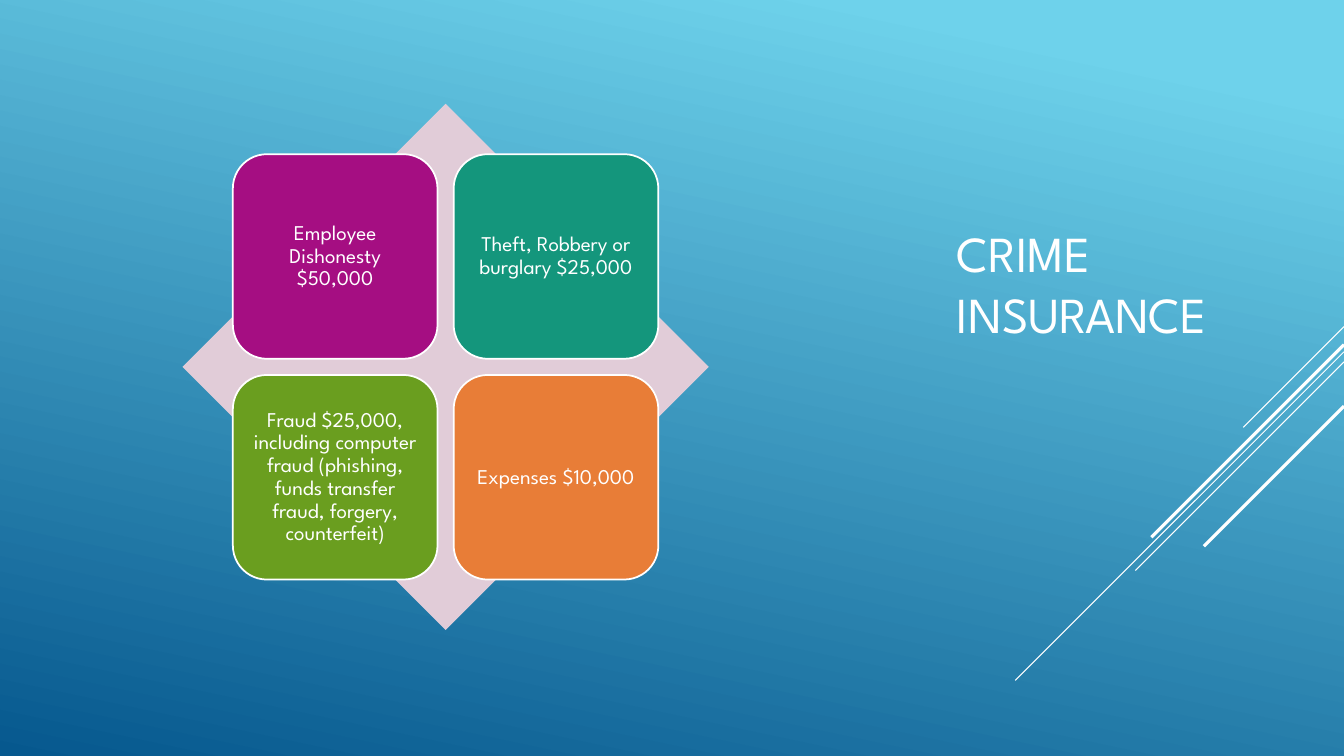
import pptx
import pptx.util
import pptx.dml.color
import pptx.enum.shapes
import pptx.enum.text
import pptx.oxml.ns
import lxml.etree

Inches = pptx.util.Inches
Pt = pptx.util.Pt
SHAPE = pptx.enum.shapes.MSO_SHAPE
ALIGN = pptx.enum.text.PP_ALIGN
FONT = "League Spartan"
WHITE = "FFFFFF"
WIDTH, HEIGHT = 13.33, 7.5


def rgb(value):
    return pptx.dml.color.RGBColor.from_string(value)


def add_shape(s, kind, x, y, w, h):
    sp = s.shapes.add_shape(kind, Inches(x), Inches(y), Inches(w), Inches(h))
    sp.shadow.inherit = False
    sp.line.fill.background()
    return sp


def set_text(sp, text, size, align, inset):
    tf = sp.text_frame
    tf.text = text
    tf.word_wrap = True
    tf.vertical_anchor = pptx.enum.text.MSO_ANCHOR.MIDDLE
    tf.margin_left = tf.margin_right = Inches(inset)
    tf.margin_top = tf.margin_bottom = Inches(inset)
    p = tf.paragraphs[0]
    p.alignment = align
    r = p.runs[0]
    r.font.name = FONT
    r.font.size = Pt(size)
    r.font.color.rgb = rgb(WHITE)
    return p


def draw_background(s, x, y, w, h):
    sp = add_shape(s, SHAPE.RECTANGLE, x, y, w, h)
    sp.fill.gradient()
    sp.fill.gradient_angle = 258
    stops = ((0.1, "6ED2EB"), (1, "06588E"))
    for stop, (position, color) in zip(sp.fill.gradient_stops, stops):
        stop.position = position
        stop.color.rgb = rgb(color)


def draw_diagonals(s, right):
    diagonals = (
        (3.24, 1, 0.75),
        (3.49, 3.26, 0.75),
        (3.59, 2.07, 0.75),
        (3.42, 1.91, 2.25),
        (4.03, 1.39, 2.25),
    )
    for top, run, weight in diagonals:
        line = s.shapes.add_connector(
            pptx.enum.shapes.MSO_CONNECTOR.STRAIGHT,
            Inches(right), Inches(top), Inches(right - run), Inches(top + run))
        line.line.color.rgb = rgb(WHITE)
        line.line.width = Pt(weight)
        lxml.etree.SubElement(
            line._element.spPr, pptx.oxml.ns.qn("a:effectLst"))


def draw_title(s, x, y, w, h):
    sp = s.shapes.add_textbox(Inches(x), Inches(y), Inches(w), Inches(h))
    set_text(sp, "CRIME INSURANCE", 36, ALIGN.LEFT, 0.1)


def draw_coverage_matrix(s, x, y, size):
    diamond = add_shape(s, SHAPE.DIAMOND, x, y, size, size)
    diamond.fill.solid()
    diamond.fill.fore_color.rgb = rgb("E1CCD8")

    coverages = (
        ("Employee Dishonesty $50,000", "A50E82"),
        ("Theft, Robbery or burglary $25,000", "14967C"),
        ("Fraud $25,000, including computer fraud (phishing, "
         "funds transfer fraud, forgery, counterfeit)", "6A9E1F"),
        ("Expenses $10,000", "E87D37"),
    )
    tile, gap = 2.03, 0.16
    margin = (size - 2 * tile - gap) / 2
    for i, (text, color) in enumerate(coverages):
        row, col = divmod(i, 2)
        sp = add_shape(s, SHAPE.ROUNDED_RECTANGLE,
                       x + margin + col * (tile + gap),
                       y + margin + row * (tile + gap), tile, tile)
        sp.fill.solid()
        sp.fill.fore_color.rgb = rgb(color)
        sp.line.color.rgb = rgb(WHITE)
        sp.line.width = Pt(1.25)
        p = set_text(sp, text, 15, ALIGN.CENTER, 0.06)
        p.line_spacing = 0.9


def main():
    prs = pptx.Presentation()
    prs.slide_width = Inches(WIDTH)
    prs.slide_height = Inches(HEIGHT)
    s = prs.slides.add_slide(prs.slide_layouts[6])
    draw_background(s, 0, 0, WIDTH, HEIGHT)
    draw_diagonals(s, WIDTH)
    draw_title(s, 9.39, 1.03, 3.33, 3.55)
    draw_coverage_matrix(s, 1.81, 1.03, 5.22)
    prs.save("out.pptx")


if __name__ == "__main__":
    main()
